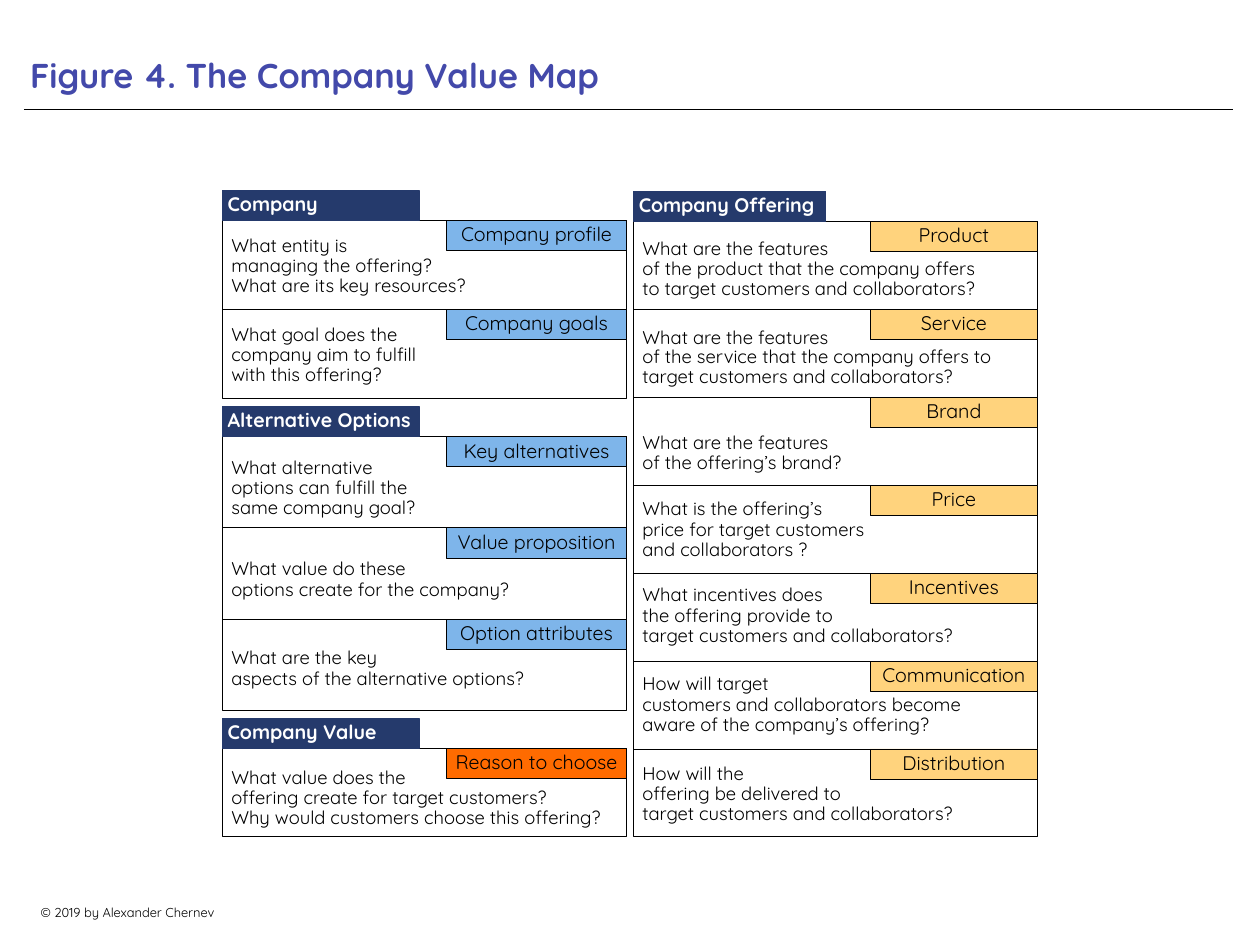
from pptx import Presentation
from pptx.dml.color import RGBColor
from pptx.enum.shapes import MSO_CONNECTOR as Connector, MSO_SHAPE as Preset
from pptx.enum.text import MSO_ANCHOR as Anchor, PP_ALIGN as Align
from pptx.oxml.ns import qn
from pptx.util import Inches, Pt
from lxml.etree import SubElement

BLACK, WHITE, NAVY, PURPLE = "000000", "FFFFFF", "253A6C", "4349AA"
BLUE, ORANGE, YELLOW = "7EB5EA", "FF6B00", "FFD37D"
BAR_HEIGHT = 0.34
QUESTION_HEIGHT = 0.8

COMPANY = [
    ("Company profile", 0.52, "What entity is\vmanaging the offering?\vWhat are its key resources?"),
    ("Company goals", 0.52, "What goal does the\vcompany aim to fulfill\vwith this offering?"),
]
ALTERNATIVES = [
    ("Key alternatives", 0.59, "What alternative\voptions can fulfill the\vsame company goal?"),
    ("Value proposition", 0.59, "What value do these\noptions create for the company?"),
    ("Option attributes", 0.56, "What are the key\naspects of the alternative options?"),
]
VALUE = [
    ("Reason to choose", 0.57, "What value does the\voffering create for target customers?\v"
     "Why would customers choose this offering?"),
]
OFFERING = [
    ("Product", 0.54, "What are the features\vof the product that the company offers\v"
     "to target customers and collaborators?"),
    ("Service", 0.55, "What are the features\vof the service that the company offers to "
     "target customers and collaborators?"),
    ("Brand", 0.64, "What are the features\vof the offering’s brand?"),
    ("Price", 0.51, "What is the offering’s\nprice for target customers\vand collaborators ?"),
    ("Incentives", 0.48, "What incentives does\nthe offering provide to\v"
     "target customers and collaborators?"),
    ("Communication", 0.5, "How will target\ncustomers and collaborators become "
     "aware of the company’s offering?"),
    ("Distribution", 0.51, "How will the\voffering be delivered to\v"
     "target customers and collaborators?"),
]


def color(value):
    return RGBColor.from_string(value)


def write(shape, text, size=15, ink=BLACK, bold=False, align=Align.LEFT, anchor=Anchor.MIDDLE,
          inset=0, spacing=0.9, wrap=True):
    frame = shape.text_frame
    frame.text = text
    frame.word_wrap = wrap
    frame.vertical_anchor = anchor
    frame.margin_left = frame.margin_right = Inches(inset)
    frame.margin_top = frame.margin_bottom = Inches(inset if anchor == Anchor.BOTTOM else 0)
    for index, para in enumerate(frame.paragraphs):
        para.alignment = align
        para.line_spacing = spacing
        para.space_before = Pt(1 if index else 0)
        for span in para.runs:
            span.font.name = "Quicksand"
            span.font.size = Pt(size)
            span.font.bold = bold
            span.font.color.rgb = color(ink)


def add_text(page, left, top, width, height, text, **style):
    box = page.shapes.add_textbox(Inches(left), Inches(top), Inches(width), Inches(height))
    write(box, text, **style)


def add_box(page, left, top, width, height, fill=None, line=BLACK, weight=0.75):
    box = page.shapes.add_shape(Preset.RECTANGLE, Inches(left), Inches(top),
                                Inches(width), Inches(height))
    box.shadow.inherit = False
    if fill:
        box.fill.solid()
        box.fill.fore_color.rgb = color(fill)
    else:
        box.fill.background()
    box.line.color.rgb = color(line)
    box.line.width = Pt(weight)
    return box


def add_rule(page, left, top, width, weight=0.75):
    rule = page.shapes.add_connector(Connector.STRAIGHT, Inches(left), Inches(top),
                                     Inches(left + width), Inches(top))
    rule.line.color.rgb = color(BLACK)
    rule.line.width = Pt(weight)
    SubElement(rule._element.spPr, qn("a:effectLst"))


def add_panel(page, left, top, width, height, heading, rows, heading_width=2.22,
              tag_width=2.03, tag_fill=BLUE, question_width=4.38):
    add_box(page, left, top, width, height)
    header = add_box(page, left, top - BAR_HEIGHT, heading_width, BAR_HEIGHT, NAVY, NAVY, 1)
    write(header, heading, size=16, ink=WHITE, bold=True, inset=0.06)
    row_height = height / len(rows)
    for index, (label, middle, question) in enumerate(rows):
        row_top = top + index * row_height
        if index:
            add_rule(page, left, row_top, width)
        add_text(page, left + 0.1, row_top + middle - QUESTION_HEIGHT / 2,
                 question_width, QUESTION_HEIGHT, question)
        tag = add_box(page, left + width - tag_width, row_top, tag_width, BAR_HEIGHT,
                      tag_fill, weight=0.5)
        write(tag, label, size=16, align=Align.CENTER)


def add_frame(page, left, width):
    add_text(page, left, 0, width, 1.15, "Figure 4. The Company Value Map", size=28,
             ink=PURPLE, bold=True, anchor=Anchor.BOTTOM, inset=0.07, spacing=1)
    add_rule(page, left, 1.24, width, weight=0.5)
    add_text(page, left, 10.16, 2.34, 0.28, "© 2019 by Alexander Chernev", size=10.5,
             align=Align.CENTER, spacing=1, wrap=False)


def main():
    deck = Presentation()
    deck.slide_width, deck.slide_height = Inches(14.22), Inches(10.67)
    page = deck.slides.add_slide(deck.slide_layouts[6])
    add_frame(page, 0.27, 13.65)
    add_panel(page, 7.15, 2.5, 4.56, 6.95, "Company Offering", OFFERING, heading_width=2.17,
              tag_width=1.89, tag_fill=YELLOW, question_width=4.03)
    add_panel(page, 2.51, 2.49, 4.56, 2.01, "Company", COMPANY)
    add_panel(page, 2.51, 4.93, 4.56, 3.09, "Alternative Options", ALTERNATIVES)
    add_panel(page, 2.51, 8.45, 4.56, 1, "Company Value", VALUE, tag_fill=ORANGE)
    deck.save("out.pptx")


if __name__ == "__main__":
    main()
